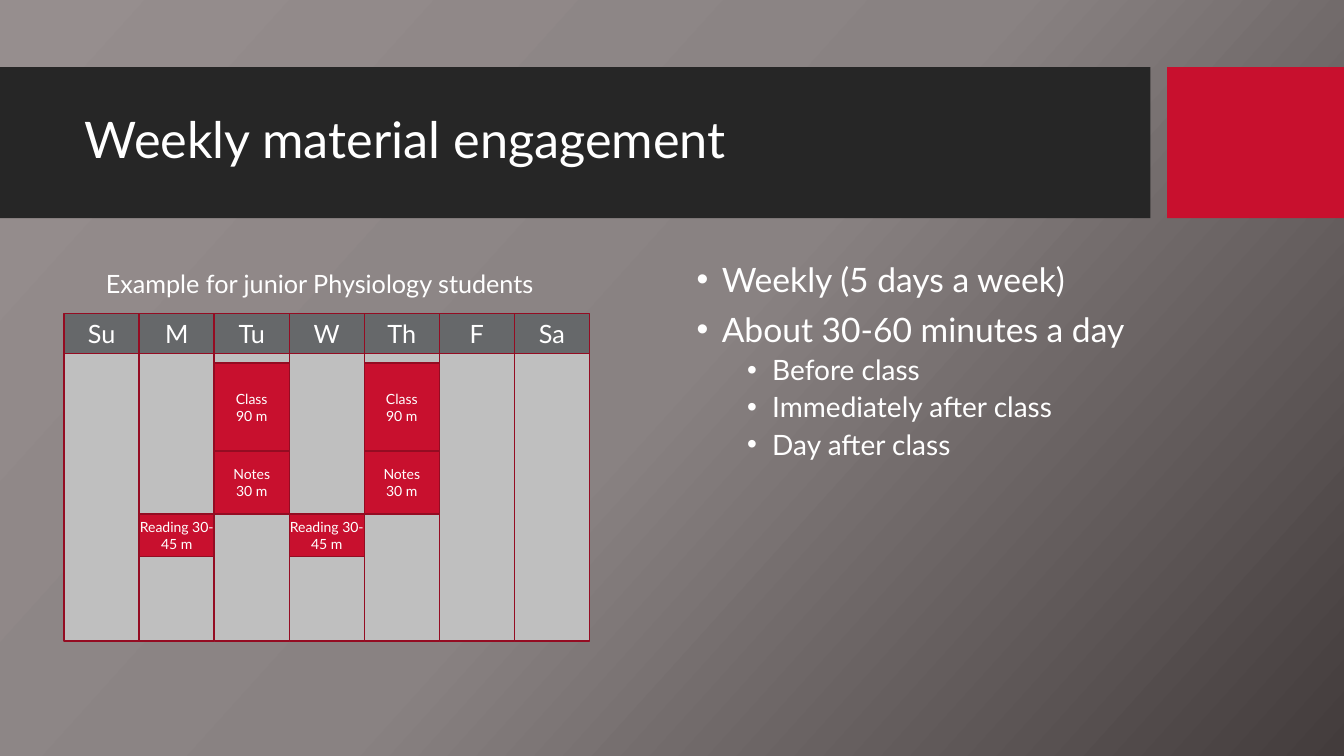
"""Build the weekly material engagement slide."""
from copy import deepcopy
from dataclasses import dataclass

from lxml import etree
from pptx import Presentation
from pptx import util as u
from pptx.dml.color import RGBColor
from pptx.enum import shapes, text
from pptx.oxml.ns import qn
from pptx.shapes.autoshape import Shape
from pptx.slide import Slide
from pptx.text.text import TextFrame


@dataclass(frozen=True)
class Theme:
    font: str = "Lato"
    white: str = "FFFFFF"
    banner: str = "262626"
    accent: str = "C8102E"
    border: str = "940C22"
    header: str = "66686A"
    column: str = "BFBFBF"
    backdrop: tuple[str, ...] = ("968E8E", "898282", "433C3C")
    backdrop_angle: float = 42
    title: float = 36
    body: float = 24
    detail: float = 20
    label: float = 18
    session: float = 10


@dataclass(frozen=True)
class Area:
    left: float
    top: float
    width: float
    height: float


@dataclass(frozen=True)
class Session:
    lines: tuple[str, ...]
    days: tuple[str, ...]
    top: float
    height: float


@dataclass(frozen=True)
class Bullet:
    words: str
    size: float
    indent: float
    space: float


THEME = Theme()
DAYS = ("Su", "M", "Tu", "W", "Th", "F", "Sa")
CALENDAR = Area(45.8, 224, 53.6 * len(DAYS), 234)
HEADER_HEIGHT = 28.4
SESSIONS = (
    Session(("Class", "90 m"), ("Tu", "Th"), 259.2, 63),
    Session(("Notes", "30 m"), ("Tu", "Th"), 322.2, 45),
    Session(("Reading 30-45 m",), ("M", "W"), 367.2, 30.2),
)
BULLETS = (
    Bullet("Weekly (5 days a week)", THEME.body, 18, 0),
    Bullet("About 30-60 minutes a day", THEME.body, 18, 10),
    Bullet("Before class", THEME.detail, 54, 5),
    Bullet("Immediately after class", THEME.detail, 54, 5),
    Bullet("Day after class", THEME.detail, 54, 5),
)


def write(frame: TextFrame, words: str, *, size: float, align=text.PP_ALIGN.LEFT,
          line: float = 1.0, space: float = 0, indent: float = 0) -> None:
    """Add one formatted paragraph, using the empty first one if there is one."""
    first = frame.paragraphs[0]
    para = first if not first.runs else frame.add_paragraph()
    para.alignment = align
    para.line_spacing = line
    para.space_before = u.Pt(space)
    if indent:
        properties = para._p.get_or_add_pPr()
        properties.set("marL", str(u.Pt(indent)))
        properties.set("indent", str(u.Pt(-18)))
        font = etree.SubElement(properties, qn("a:buFont"))
        font.set("typeface", "Arial")
        etree.SubElement(properties, qn("a:buChar")).set("char", "•")
    span = para.add_run()
    span.text = words
    span.font.name = THEME.font
    span.font.size = u.Pt(size)
    span.font.color.rgb = RGBColor.from_string(THEME.white)


def add_box(page: Slide, area: Area, fill: str, border: str | None = None) -> Shape:
    """Draw a filled rectangle, with a thin border if a colour is given."""
    box = page.shapes.add_shape(
        shapes.MSO_SHAPE.RECTANGLE,
        u.Pt(area.left), u.Pt(area.top), u.Pt(area.width), u.Pt(area.height))
    box.shadow.inherit = False
    box.fill.solid()
    box.fill.fore_color.rgb = RGBColor.from_string(fill)
    if border:
        box.line.color.rgb = RGBColor.from_string(border)
        box.line.width = u.Pt(1)
    else:
        box.line.fill.background()
    return box


def add_cell(page: Slide, area: Area, fill: str, lines: tuple[str, ...], size: float) -> None:
    """Draw a bordered calendar cell with centred lines."""
    frame = add_box(page, area, fill, THEME.border).text_frame
    frame.word_wrap = True
    frame.margin_left = frame.margin_right = 0
    frame.margin_top = frame.margin_bottom = 0
    frame.vertical_anchor = text.MSO_ANCHOR.MIDDLE
    for words in lines:
        write(frame, words, size=size, align=text.PP_ALIGN.CENTER)


def add_text_frame(page: Slide, area: Area, wrap: bool = True,
                   anchor=text.MSO_ANCHOR.TOP) -> TextFrame:
    """Add a text box and return its frame."""
    box = page.shapes.add_textbox(
        u.Pt(area.left), u.Pt(area.top), u.Pt(area.width), u.Pt(area.height))
    frame = box.text_frame
    frame.word_wrap = wrap
    frame.vertical_anchor = anchor
    return frame


def paint_backdrop(page: Slide) -> None:
    """Fill the background with evenly spaced gradient stops."""
    fill = page.background.fill
    fill.gradient()
    fill.gradient_angle = 360 - THEME.backdrop_angle
    stops = page.element.xpath(".//p:bg//a:gsLst")[0]
    stops.append(deepcopy(stops[-1]))
    for index, (stop, color) in enumerate(zip(fill.gradient_stops, THEME.backdrop)):
        stop.position = index / (len(THEME.backdrop) - 1)
        stop.color.rgb = RGBColor.from_string(color)


def add_calendar(page: Slide) -> None:
    """Draw the day columns, their headers and the study sessions."""
    pitch = CALENDAR.width / len(DAYS)
    lefts = {day: CALENDAR.left + index * pitch for index, day in enumerate(DAYS)}
    body_top = CALENDAR.top + HEADER_HEIGHT
    body_height = CALENDAR.height - HEADER_HEIGHT
    for left in lefts.values():
        add_box(page, Area(left, body_top, pitch, body_height), THEME.column, THEME.border)
    for day, left in lefts.items():
        add_cell(page, Area(left, CALENDAR.top, pitch, HEADER_HEIGHT),
                 THEME.header, (day,), THEME.label)
    for session in SESSIONS:
        for day in session.days:
            add_cell(page, Area(lefts[day], session.top, pitch, session.height),
                     THEME.accent, session.lines, THEME.session)


def main() -> None:
    """Build and save the deck."""
    deck = Presentation()
    deck.slide_width, deck.slide_height = u.Pt(960), u.Pt(540)
    page = deck.slides.add_slide(deck.slide_layouts[6])
    paint_backdrop(page)
    add_box(page, Area(0, 48, 821.8, 107.8), THEME.banner)
    add_box(page, Area(833.6, 48, 126.4, 107.8), THEME.accent)
    title = add_text_frame(page, Area(53.5, 59, 756.5, 85), anchor=text.MSO_ANCHOR.MIDDLE)
    write(title, "Weekly material engagement", size=THEME.title, line=0.9)
    body = add_text_frame(page, Area(490.5, 184.3, 320.5, 283.7))
    for bullet in BULLETS:
        write(body, bullet.words, size=bullet.size, line=0.9,
              space=bullet.space, indent=bullet.indent)
    add_calendar(page)
    caption = add_text_frame(page, Area(68.5, 188, 329.5, 29), wrap=False)
    write(caption, "Example for junior Physiology students", size=THEME.label)
    deck.save("out.pptx")


if __name__ == "__main__":
    main()
